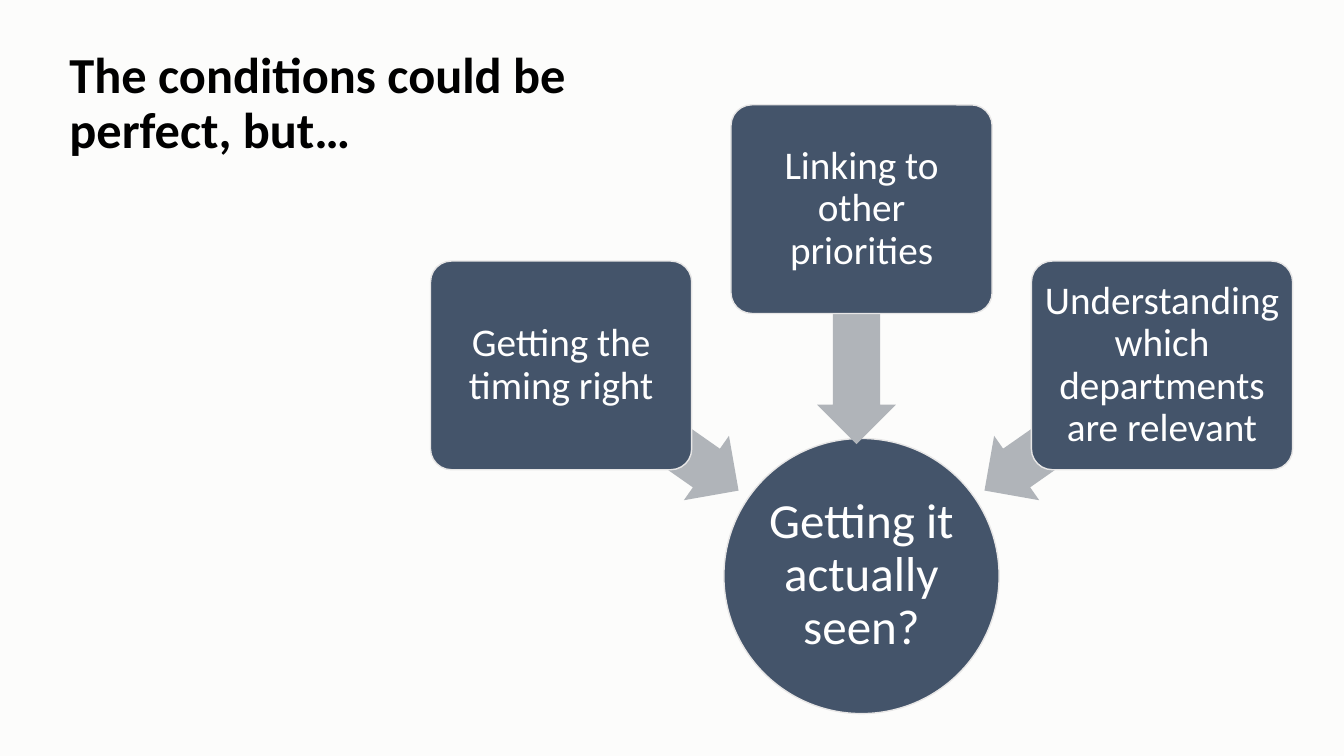
from pptx import Presentation
from pptx.dml.color import RGBColor
from pptx.enum.shapes import MSO_SHAPE
from pptx.enum.text import MSO_ANCHOR, PP_ALIGN
from pptx.util import Inches, Pt

BACKGROUND = RGBColor(0xFC, 0xFC, 0xFB)
NAVY = RGBColor(0x44, 0x54, 0x6A)
OUTLINE = RGBColor(0xE7, 0xE6, 0xE6)
ARROW_GRAY = RGBColor(0xB0, 0xB4, 0xB9)
WHITE = RGBColor(0xFF, 0xFF, 0xFF)
BLACK = RGBColor(0, 0, 0)

CARD_WIDTH, CARD_HEIGHT = 2.59, 2.07
CIRCLE_SIZE = 2.73
ARROW_LENGTH, ARROW_HEIGHT = 2.15, 0.78

# Card text, card top, arrow centre (from the diagram's middle and top), rotation
FACTORS = [
    ("Getting the timing right", 1.55, -2.1, 3.21, 215),
    ("Linking to other priorities", 0, -0.05, 2.29, 270),
    ("Understanding which departments are relevant", 1.55, 2.1, 3.21, 325),
]


def write_text(shape, text, size, color, bold=False, align=PP_ALIGN.CENTER):
    frame = shape.text_frame
    frame.word_wrap = True
    frame.vertical_anchor = MSO_ANCHOR.MIDDLE
    para = frame.paragraphs[0]
    para.text = text
    para.alignment = align
    para.line_spacing = 0.9
    font = para.runs[0].font
    font.name, font.size, font.bold = "Calibri", Pt(size), bold
    font.color.rgb = color


def add_filled(slide, kind, left, top, width, height, fill):
    shape = slide.shapes.add_shape(
        kind, Inches(left), Inches(top), Inches(width), Inches(height))
    shape.shadow.inherit = False
    shape.fill.solid()
    shape.fill.fore_color.rgb = fill
    shape.line.fill.background()
    return shape


def add_label_shape(slide, kind, left, top, width, height, text, size, inset):
    shape = add_filled(slide, kind, left, top, width, height, NAVY)
    shape.line.color.rgb = OUTLINE
    shape.line.width = Pt(1)
    frame = shape.text_frame
    frame.margin_left = frame.margin_right = Inches(inset)
    frame.margin_top = frame.margin_bottom = Inches(inset)
    write_text(shape, text, size, WHITE)
    return shape


def add_title(slide, left, top, width, height):
    box = slide.shapes.add_textbox(
        Inches(left), Inches(top), Inches(width), Inches(height))
    write_text(box, "The conditions could be perfect, but…", 36, BLACK,
               bold=True, align=PP_ALIGN.LEFT)


def add_diagram(slide, left, top, width, height):
    middle = left + width / 2

    # Central question
    add_label_shape(slide, MSO_SHAPE.OVAL, middle - CIRCLE_SIZE / 2,
                    top + height - CIRCLE_SIZE, CIRCLE_SIZE, CIRCLE_SIZE,
                    "Getting it actually seen?", 35, 0.02)

    # Factors, each with an arrow behind its card
    pitch = (width - CARD_WIDTH) / (len(FACTORS) - 1)
    for index, (text, card_top, arrow_x, arrow_y, rotation) in enumerate(FACTORS):
        arrow = add_filled(slide, MSO_SHAPE.LEFT_ARROW,
                           middle + arrow_x - ARROW_LENGTH / 2,
                           top + arrow_y - ARROW_HEIGHT / 2,
                           ARROW_LENGTH, ARROW_HEIGHT, ARROW_GRAY)
        arrow.adjustments[0] = 0.6
        arrow.adjustments[1] = 0.5
        arrow.rotation = rotation

        card = add_label_shape(slide, MSO_SHAPE.ROUNDED_RECTANGLE,
                               left + index * pitch, top + card_top,
                               CARD_WIDTH, CARD_HEIGHT, text, 28, 0.06)
        card.adjustments[0] = 0.1


def main():
    deck = Presentation()
    deck.slide_width, deck.slide_height = Inches(13.33), Inches(7.5)
    slide = deck.slides.add_slide(deck.slide_layouts[6])
    slide.background.fill.solid()
    slide.background.fill.fore_color.rgb = BACKGROUND
    add_title(slide, 0.59, -0.3, 5.77, 2.68)
    add_diagram(slide, 4.27, 1.04, 8.55, 6.04)
    deck.save("out.pptx")


if __name__ == "__main__":
    main()
